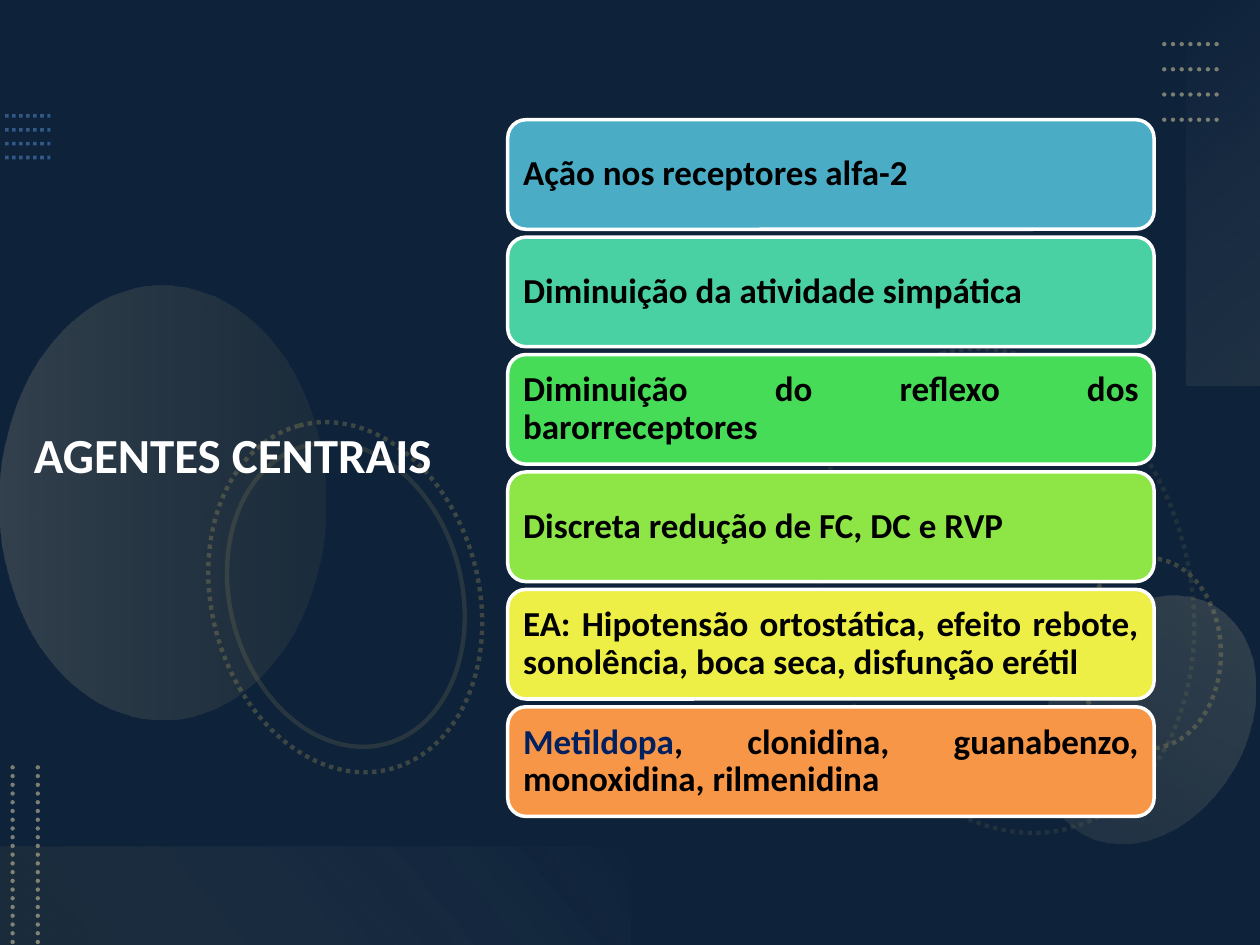
"""Build the slide on centrally acting agents."""
from pptx import Presentation, util as u
from pptx.dml.color import RGBColor
from pptx.enum import dml, shapes, text
from pptx.oxml.ns import qn
from lxml import etree

W, H = 10, 7.5
FONT = "Calibri"
HEX = {"navy": "1F497D", "black": "000000", "white": "FFFFFF", "blue": "558ED5",
       "tan": "C4BD97", "olive": "948A54", "pale": "F8F7F3", "ivory": "F5F4ED",
       "ink": "002060", "aqua": "4BACC6", "mint": "49D1A3", "green": "47DC57",
       "lime": "8DE646", "yellow": "EEEF46", "orange": "F79646"}

TITLE = "AGENTES CENTRAIS"
LEFT, JUST = text.PP_ALIGN.LEFT, text.PP_ALIGN.JUSTIFY
CARDS = [
    ("aqua", LEFT, [("Ação nos receptores alfa-2", "black")]),
    ("mint", LEFT, [("Diminuição da atividade simpática", "black")]),
    ("green", JUST, [("Diminuição do reflexo dos barorreceptores", "black")]),
    ("lime", JUST, [("Discreta redução de FC, DC e RVP", "black")]),
    ("yellow", JUST, [("EA: Hipotensão ortostática, efeito rebote, "
                       "sonolência, boca seca, disfunção erétil", "black")]),
    ("orange", JUST, [("Metildopa", "ink"),
                      (", clonidina, guanabenzo, monoxidina, rilmenidina", "black")]),
]
GRID = {"x": 4.03, "y": 0.95, "w": 5.13, "h": 0.87, "step": 0.932}

OVAL, RECT = shapes.MSO_SHAPE.OVAL, shapes.MSO_SHAPE.RECTANGLE
RINGS = [((6.03, 3.23, 3.9, 2.92), 75, True, 15),
         ((8.37, 4.62, 1.51, 1.13), 270, True, 35),
         ((1.33, 3.68, 2.82, 2.12), 75, True, 35),
         ((1.52, 3.8, 2.45, 1.84), 75, False, 20)]
BLOBS = [(OVAL, (-0.43, 2.7, 3.44, 2.58), 270, 90, [(0, "tan", 20), (1, "olive", 10)]),
         (OVAL, (8.33, 4.67, 1.56, 2.08), 210, 90, [(0, "tan", 10), (1, "tan", 20)]),
         (RECT, (8.18, 1.24, 3.06, 0.58), 270, 140, [(0, "pale", 0), (1, "tan", 10)]),
         (RECT, (0, 6.72, 5, 0.78), 180, 140, [(0.1, "olive", 10), (1, "ivory", 0)])]
DOTS = [((0.04, 0.92, 0.4, 0.92), (0, 0.11), 4, "blue", 2, 50, "flat"),
        ((9.24, 0.35, 9.69, 0.35), (0, 0.2), 4, "tan", 2.5, 60, "rnd"),
        ((0.1, 6.09, 0.1, H), (0.2, 0), 2, "tan", 2.5, 60, "rnd")]

deck = Presentation()
deck.slide_width, deck.slide_height = u.Inches(W), u.Inches(H)
slide = deck.slides.add_slide(deck.slide_layouts[6])


def color(name):
    return RGBColor.from_string(HEX[name])


def paint(fill, name):
    fill.solid()
    fill.fore_color.rgb = color(name)


def fade(item, *shares):
    for node, share in zip(item._element.xpath(".//a:srgbClr"), shares):
        etree.SubElement(node, qn("a:alpha")).set("val", str(share * 1000))


def shape(kind, box, turn=0):
    item = slide.shapes.add_shape(kind, *map(u.Inches, box))
    item.rotation = turn
    item.shadow.inherit = False
    item.line.fill.background()
    return item


def stroke(line, name, width, dots=False):
    paint(line.fill, name)
    line.width = u.Pt(width)
    if dots:
        line.dash_style = dml.MSO_LINE.ROUND_DOT


def ring(box, turn, dots, share):
    item = shape(OVAL, box, turn)
    item.fill.background()
    stroke(item.line, "olive", 2.5, dots)
    fade(item, share)


def blob(kind, box, turn, angle, stops):
    item = shape(kind, box, turn)
    item.fill.gradient()
    item.fill.gradient_angle = 360 - angle
    for stop, (place, name, _) in zip(item.fill.gradient_stops, stops):
        stop.position = place
        stop.color.rgb = color(name)
    fade(item, *(share for _, _, share in stops))


def rows(ends, step, count, name, width, share, cap):
    for i in range(count):
        spots = [u.Inches(v + i * d) for v, d in zip(ends, step * 2)]
        item = slide.shapes.add_connector(shapes.MSO_CONNECTOR.STRAIGHT, *spots)
        stroke(item.line, name, width, True)
        item._element.xpath(".//a:ln")[0].set("cap", cap)
        etree.SubElement(item._element.spPr, qn("a:effectLst"))
        fade(item, share)


def write(frame, runs, size, align):
    frame.word_wrap = True
    frame.vertical_anchor = text.MSO_ANCHOR.MIDDLE
    para = frame.paragraphs[0]
    para.alignment, para.line_spacing = align, 0.9
    para.font.name, para.font.size, para.font.bold = FONT, u.Pt(size), True
    for words, name in runs:
        run = para.add_run()
        run.text = words
        run.font.color.rgb = color(name)


def card(i, name, align, runs):
    box = GRID["x"], GRID["y"] + i * GRID["step"], GRID["w"], GRID["h"]
    item = shape(shapes.MSO_SHAPE.ROUNDED_RECTANGLE, box)
    paint(item.fill, name)
    stroke(item.line, "white", 2)
    frame = item.text_frame
    frame.margin_left = frame.margin_right = u.Inches(0.08)
    frame.margin_top = frame.margin_bottom = u.Inches(0.08)
    write(frame, runs, 20, align)


def main():
    paint(slide.background.fill, "navy")
    veil = shape(RECT, (0, 0, W, H))
    paint(veil.fill, "black")
    fade(veil, 53)
    for spec in RINGS:
        ring(*spec)
    for spec in BLOBS:
        blob(*spec)
    for spec in DOTS:
        rows(*spec)
    title = slide.shapes.add_textbox(*map(u.Inches, (0.17, 0.55, 3.83, 6.17)))
    write(title.text_frame, [(TITLE, "white")], 28, LEFT)
    for i, spec in enumerate(CARDS):
        card(i, *spec)
    deck.save("out.pptx")


if __name__ == "__main__":
    main()
